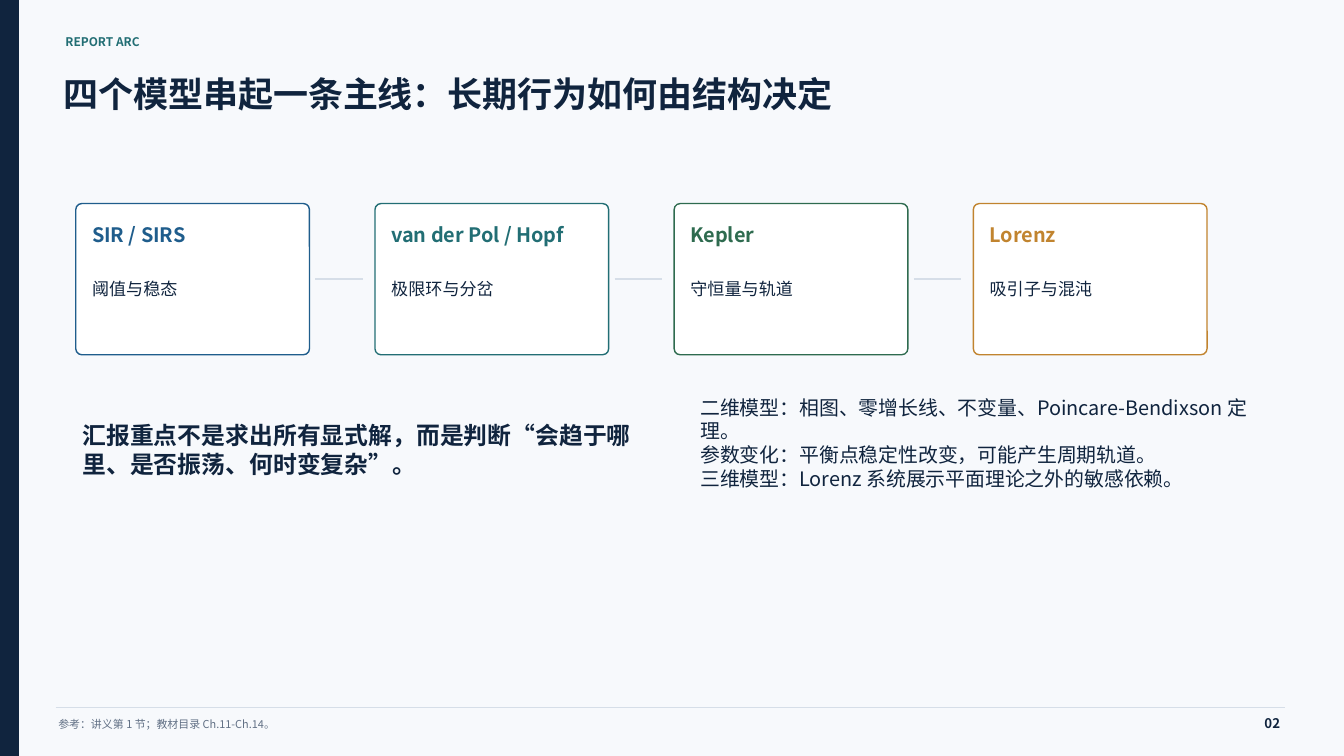
from pptx import Presentation
from pptx import util as u
from pptx.dml import color
from pptx.enum import shapes, text
from pptx.oxml import ns
from lxml import etree

FONT = "Noto Sans CJK SC"
COLORS = {
    "paper": "F7F9FC",
    "ink": "10243E",
    "white": "FFFFFF",
    "rule": "D6DEE8",
    "muted": "617085",
    "blue": "1F5D8C",
    "teal": "226E74",
    "green": "2E6B4F",
    "amber": "C1842F",
}

prs = Presentation()
prs.slide_width, prs.slide_height = u.Cm(33.87), u.Cm(19.05)
s = prs.slides.add_slide(prs.slide_layouts[6])
s.background.fill.solid()
s.background.fill.fore_color.rgb = color.RGBColor.from_string(COLORS["paper"])


def add_text(content, x, y, w, h, size, fill="ink", bold=False,
             align=text.PP_ALIGN.LEFT, anchor=text.MSO_ANCHOR.MIDDLE):
    tf = s.shapes.add_textbox(u.Cm(x), u.Cm(y), u.Cm(w), u.Cm(h)).text_frame
    tf.word_wrap = True
    tf.vertical_anchor = anchor
    tf.margin_left = tf.margin_right = tf.margin_top = tf.margin_bottom = 0
    tf.text = content
    for p in tf.paragraphs:
        p.alignment = align
        for r in p.runs:
            r.font.name, r.font.size, r.font.bold = FONT, u.Pt(size), bold
            r.font.color.rgb = color.RGBColor.from_string(COLORS[fill])
            ea = etree.SubElement(r.font._element, ns.qn("a:ea"))
            ea.set("typeface", FONT)


def add_rule(x1, x2, y, width):
    line = s.shapes.add_connector(shapes.MSO_CONNECTOR.STRAIGHT,
                                  u.Cm(x1), u.Cm(y), u.Cm(x2), u.Cm(y))
    line.line.color.rgb = color.RGBColor.from_string(COLORS["rule"])
    line.line.width = u.Pt(width)
    etree.SubElement(line._element.spPr, ns.qn("a:effectLst"))


sidebar = s.shapes.add_shape(shapes.MSO_SHAPE.RECTANGLE, 0, 0, u.Cm(0.46), prs.slide_height)
sidebar.shadow.inherit = False
sidebar.fill.solid()
sidebar.fill.fore_color.rgb = color.RGBColor.from_string(COLORS["ink"])
sidebar.line.color.rgb = color.RGBColor.from_string(COLORS["ink"])
sidebar.line.width = u.Pt(1)

add_text("REPORT ARC", 1.65, 0.76, 5.84, 0.61, 8.5, fill="teal", bold=True)
add_text("四个模型串起一条主线：长期行为如何由结构决定", 1.6, 1.57, 29.97, 1.57, 25, bold=True)

models = [
    ("SIR / SIRS", "阈值与稳态", "blue"),
    ("van der Pol / Hopf", "极限环与分岔", "teal"),
    ("Kepler", "守恒量与轨道", "green"),
    ("Lorenz", "吸引子与混沌", "amber"),
]
card_left, card_top, card_w, card_h, pitch = 1.91, 5.13, 5.89, 3.81, 7.54

for i, (name, topic, accent) in enumerate(models):
    x = card_left + i * pitch
    card = s.shapes.add_shape(shapes.MSO_SHAPE.ROUNDED_RECTANGLE,
                              u.Cm(x), u.Cm(card_top), u.Cm(card_w), u.Cm(card_h))
    card.adjustments[0] = 0.04
    card.shadow.inherit = False
    card.fill.solid()
    card.fill.fore_color.rgb = color.RGBColor.from_string(COLORS["white"])
    card.line.color.rgb = color.RGBColor.from_string(COLORS[accent])
    card.line.width = u.Pt(1)
    add_text(name, x + 0.41, card_top + 0.46, 4.95, 0.64, 14.2, fill=accent, bold=True)
    add_text(topic, x + 0.41, card_top + 1.52, 4.95, 1.27, 12.2)
    if i < len(models) - 1:
        add_rule(x + card_w + 0.15, x + pitch - 0.31, card_top + card_h / 2, 1.7)

add_text("汇报重点不是求出所有显式解，而是判断“会趋于哪里、是否振荡、何时变复杂”。",
         2.08, 10.41, 14.22, 1.83, 17, bold=True)
add_text("二维模型：相图、零增长线、不变量、Poincare-Bendixson 定理。\n"
         "参数变化：平衡点稳定性改变，可能产生周期轨道。\n"
         "三维模型：Lorenz 系统展示平面理论之外的敏感依赖。",
         17.65, 9.96, 14.1, 4.19, 14.2, anchor=text.MSO_ANCHOR.TOP)

add_rule(1.4, 32.39, 17.83, 0.8)
add_text("参考：讲义第 1 节；教材目录 Ch.11-Ch.14。", 1.47, 17.98, 26.67, 0.56, 7.8, fill="muted")
add_text("02", 30.86, 17.91, 1.4, 0.64, 9.5, bold=True, align=text.PP_ALIGN.RIGHT)

prs.save("out.pptx")
